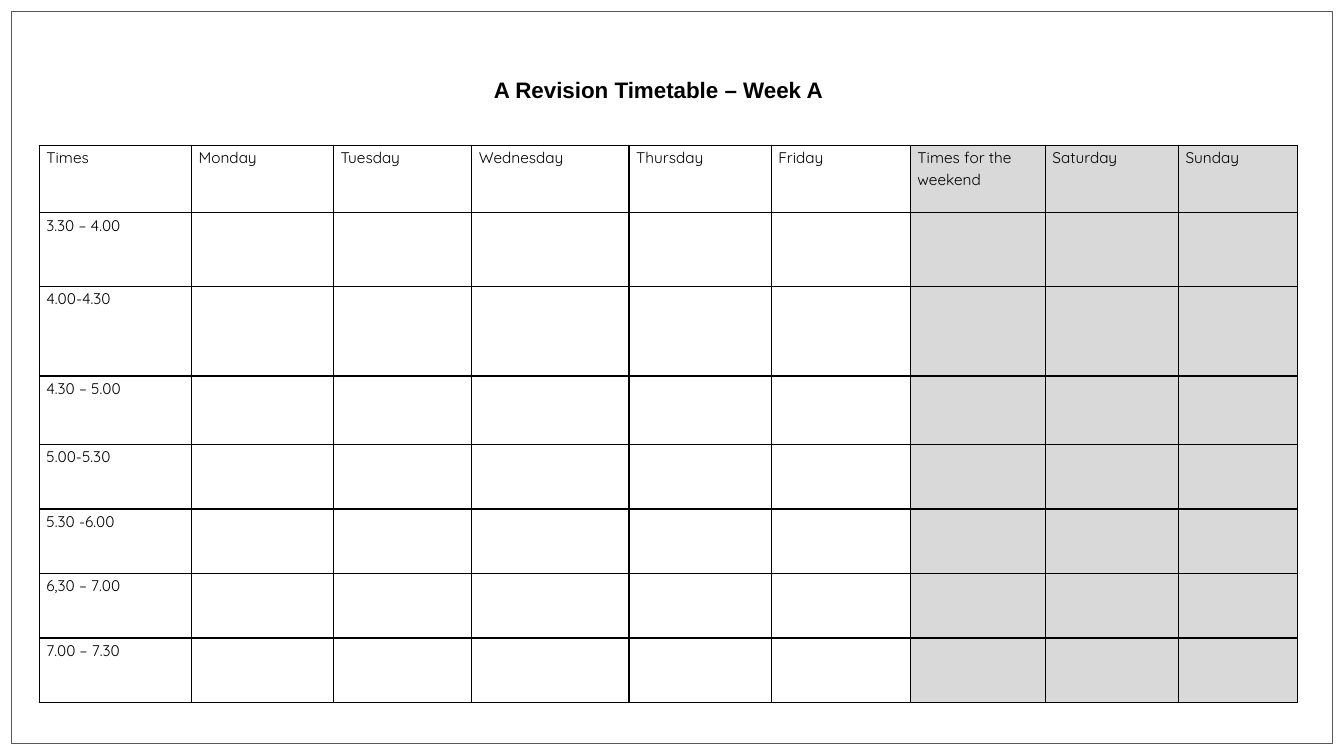
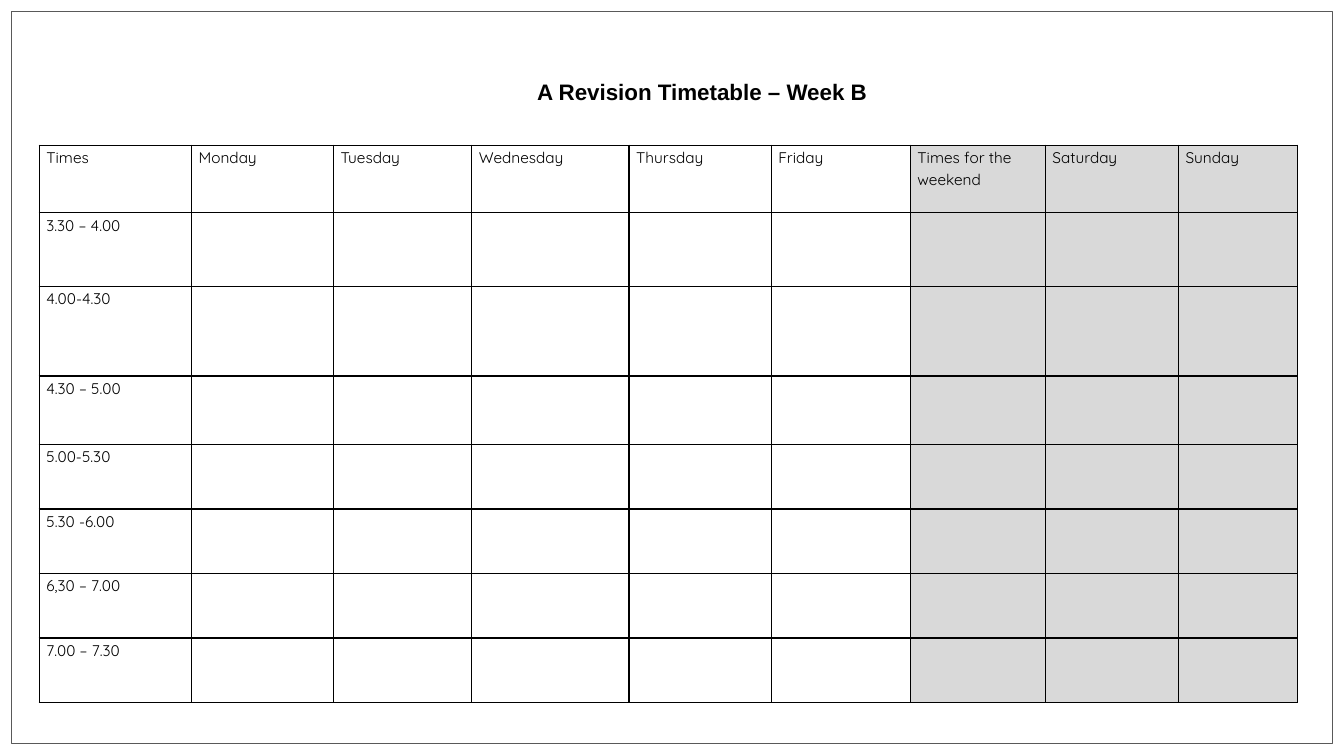
from lxml.etree import SubElement
from pptx import Presentation
from pptx.dml.color import RGBColor
from pptx.enum.shapes import MSO_SHAPE
from pptx.enum.text import MSO_ANCHOR, MSO_AUTO_SIZE
from pptx.oxml.ns import qn
from pptx.util import Inches, Pt

BLACK = RGBColor(0x00, 0x00, 0x00)
GREY = RGBColor(0x59, 0x59, 0x59)
SHADE = RGBColor(0xD9, 0xD9, 0xD9)

DAYS = ["Times", "Monday", "Tuesday", "Wednesday", "Thursday", "Friday",
        "Times for the weekend", "Saturday", "Sunday"]
TIMES = ["3.30 – 4.00", "4.00-4.30", "4.30 – 5.00", "5.00-5.30",
         "5.30 -6.00", "6,30 – 7.00", "7.00 – 7.30"]
WIDTHS = [1.51, 1.41, 1.37, 1.56, 1.41, 1.38, 1.34, 1.32, 1.18]
HEIGHTS = [0.67, 0.73, 0.89, 0.68, 0.64, 0.64, 0.64, 0.64]
WEEKEND = DAYS.index("Times for the weekend")

# Week, then left, top and width of its title
WEEKS = [("A", 4.8, 0.7, 3.74), ("B", 5.23, 0.72, 3.7)]


class Deck:
    def __init__(self):
        self.prs = Presentation()
        self.prs.slide_width = Inches(13.33)
        self.prs.slide_height = Inches(7.5)
        self.slide = None

    def page(self):
        self.slide = self.prs.slides.add_slide(self.prs.slide_layouts[6])
        self.frame()

    def frame(self):
        box = self.slide.shapes.add_shape(
            MSO_SHAPE.RECTANGLE, Inches(0.11), Inches(0.11),
            Inches(13.11), Inches(7.27))
        box.shadow.inherit = False
        box.fill.background()
        box.line.color.rgb = GREY
        box.line.width = Pt(0.75)

    def font(self, para, name, size, bold=False):
        para.font.name = name
        para.font.size = Pt(size)
        para.font.bold = bold
        para.font.color.rgb = BLACK

    def title(self, text, left, top, width):
        box = self.slide.shapes.add_textbox(
            Inches(left), Inches(top), Inches(width), Inches(0.37))
        frame = box.text_frame
        frame.word_wrap = True
        frame.auto_size = MSO_AUTO_SIZE.SHAPE_TO_FIT_TEXT
        frame.vertical_anchor = MSO_ANCHOR.MIDDLE
        frame.text = text
        self.font(frame.paragraphs[0], "Arial", 16, True)

    def border(self, cell):
        props = cell._tc.get_or_add_tcPr()
        for side in ("a:lnL", "a:lnR", "a:lnT", "a:lnB"):
            line = SubElement(props, qn(side), w=str(Pt(1)))
            fill = SubElement(line, qn("a:solidFill"))
            SubElement(fill, qn("a:srgbClr"), val=str(BLACK))

    def label(self, cell, text):
        cell.margin_left = cell.margin_right = Inches(0.07)
        cell.margin_top = cell.margin_bottom = 0
        cell.text = text
        para = cell.text_frame.paragraphs[0]
        para.line_spacing = 1.15
        para.space_after = Pt(10)
        self.font(para, "Quicksand", 11)

    def grid(self):
        table = self.slide.shapes.add_table(
            len(HEIGHTS), len(WIDTHS), Inches(0.39), Inches(1.44),
            Inches(sum(WIDTHS)), Inches(sum(HEIGHTS))).table
        table.first_row = table.horz_banding = False
        for col, width in zip(table.columns, WIDTHS):
            col.width = Inches(width)
        for row, height in zip(table.rows, HEIGHTS):
            row.height = Inches(height)
            for i, cell in enumerate(row.cells):
                self.border(cell)
                if i < WEEKEND:
                    cell.fill.background()
                else:
                    cell.fill.solid()
                    cell.fill.fore_color.rgb = SHADE
        # Day names across the top, times down the side
        for i, day in enumerate(DAYS):
            self.label(table.cell(0, i), day)
        for i, time in enumerate(TIMES, 1):
            self.label(table.cell(i, 0), time)


def main():
    deck = Deck()
    for week, left, top, width in WEEKS:
        deck.page()
        deck.grid()
        deck.title(f"A Revision Timetable – Week {week}", left, top, width)
    deck.prs.save("out.pptx")


if __name__ == "__main__":
    main()
